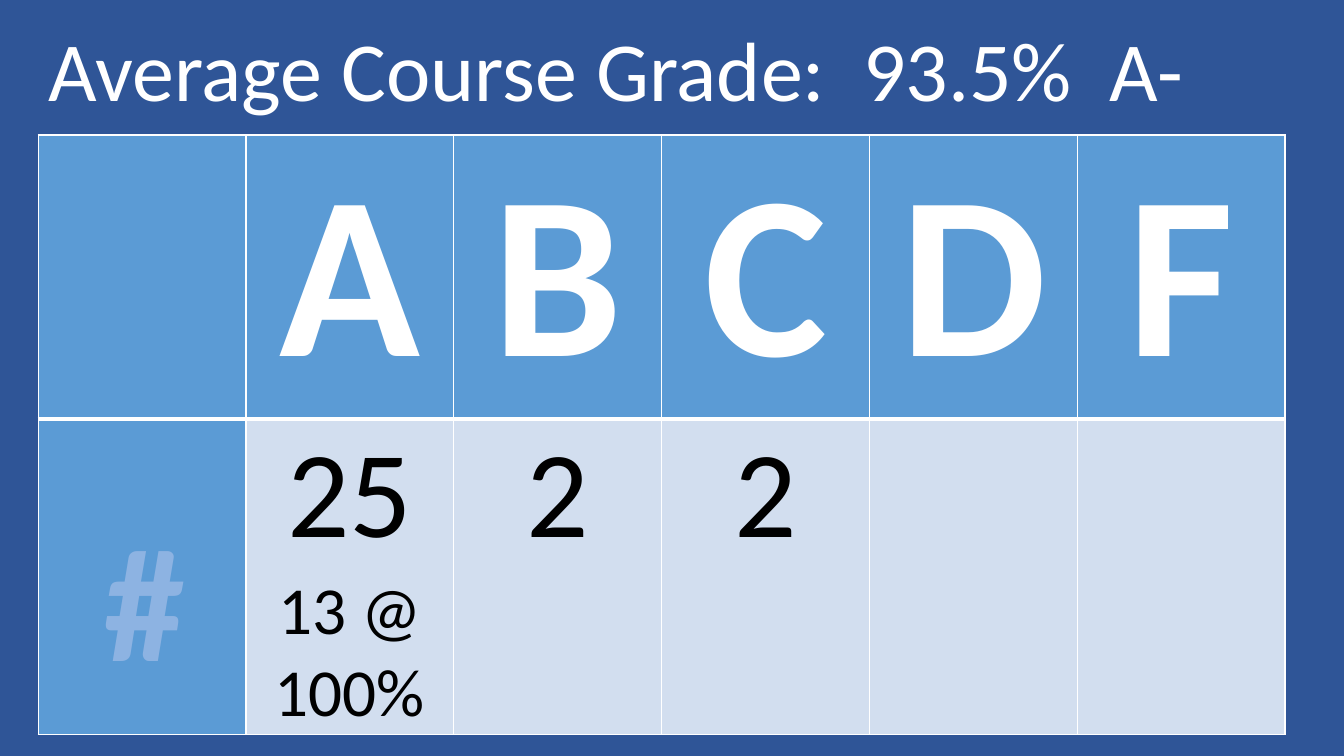
import pptx
import pptx.dml.color
import pptx.enum.text
import pptx.oxml
import pptx.oxml.ns
import pptx.util

Pt = pptx.util.Pt
ALIGN = pptx.enum.text.PP_ALIGN
ANCHOR = pptx.enum.text.MSO_ANCHOR
NAVY, BLUE, PALE = "2F5597", "5B9BD5", "D2DEEF"
WHITE, BLACK, SKY = "FFFFFF", "000000", "8DB3E2"
GRADES = ["A", "B", "C", "D", "F"]
COUNTS = [["25", "13 @ 100%"], ["2"], ["2"], [], []]
COUNT_SIZES = [88, 48]
COLUMN_WIDTH = 148.44
ROW_HEIGHTS = [203, 225]


def color(value):
    """Return the RGB colour for a hex string."""
    return pptx.dml.color.RGBColor.from_string(value)


def add_span(para, text, size, fill, bold=False):
    """Add one formatted run to a paragraph."""
    span = para.add_run()
    span.text = text
    span.font.name = "Calibri"
    span.font.size = Pt(size)
    span.font.bold = bold
    span.font.color.rgb = color(fill)


def add_title(page, text):
    """Add the headline above the table."""
    box = page.shapes.add_textbox(Pt(27.36), Pt(8.64), Pt(902.16), Pt(79.92))
    frame = box.text_frame
    frame.word_wrap = True
    frame.auto_size = pptx.enum.text.MSO_AUTO_SIZE.SHAPE_TO_FIT_TEXT
    add_span(frame.paragraphs[0], text, 60, WHITE)


def style_cell(cell, fill, top, bottom):
    """Fill a cell and draw its white borders."""
    cell.fill.solid()
    cell.fill.fore_color.rgb = color(fill)
    properties = cell._tc.get_or_add_tcPr()
    widths = {"lnL": 1, "lnR": 1, "lnT": top, "lnB": bottom}
    for index, (side, width) in enumerate(widths.items()):
        line = pptx.oxml.parse_xml(
            f'<a:{side} {pptx.oxml.ns.nsdecls("a")} w="{Pt(width)}">'
            f'<a:solidFill><a:srgbClr val="{WHITE}"/></a:solidFill></a:{side}>'
        )
        properties.insert(index, line)


def set_margins(cell, side, top):
    """Set the inner margins of a cell."""
    cell.margin_left = cell.margin_right = Pt(side)
    cell.margin_top = Pt(top)
    cell.margin_bottom = Pt(0)


def write_heading(cell, text, size, fill):
    """Write a bold heading in the middle of a cell."""
    set_margins(cell, 5.4, 0)
    cell.vertical_anchor = ANCHOR.MIDDLE
    para = cell.text_frame.paragraphs[0]
    para.alignment = ALIGN.CENTER
    add_span(para, text, size, fill, True)
    return para


def write_count(cell, lines):
    """Write the number of students and an optional remark."""
    set_margins(cell, 0.75, 0.75)
    frame = cell.text_frame
    for index, (text, size) in enumerate(zip(lines, COUNT_SIZES)):
        para = frame.add_paragraph() if index else frame.paragraphs[0]
        para.alignment = ALIGN.CENTER
        add_span(para, text, size, BLACK)


def add_grade_table(page):
    """Add the table of student counts by grade."""
    columns = len(GRADES) + 1
    table = page.shapes.add_table(
        len(ROW_HEIGHTS), columns, Pt(27.36), Pt(96.48),
        Pt(COLUMN_WIDTH * columns), Pt(sum(ROW_HEIGHTS)),
    ).table
    for column in table.columns:
        column.width = Pt(COLUMN_WIDTH)
    for row, height in zip(table.rows, ROW_HEIGHTS):
        row.height = Pt(height)
    for index in range(columns):
        style_cell(table.cell(0, index), BLUE, 1, 3)
        style_cell(table.cell(1, index), PALE if index else BLUE, 3, 1)
    for index, (grade, lines) in enumerate(zip(GRADES, COUNTS), 1):
        write_heading(table.cell(0, index), grade, 166, WHITE)
        write_count(table.cell(1, index), lines)
    label = write_heading(table.cell(1, 0), "#", 115, SKY)
    label.line_spacing = 1.3
    label._p.get_or_add_pPr().set("marL", str(Pt(3.6)))


def main():
    """Build the slide and save it."""
    deck = pptx.Presentation()
    deck.slide_width, deck.slide_height = Pt(960), Pt(540)
    page = deck.slides.add_slide(deck.slide_layouts[6])
    page.background.fill.solid()
    page.background.fill.fore_color.rgb = color(NAVY)
    add_grade_table(page)
    add_title(page, "Average Course Grade:  93.5%  A-")
    deck.save("out.pptx")


if __name__ == "__main__":
    main()
